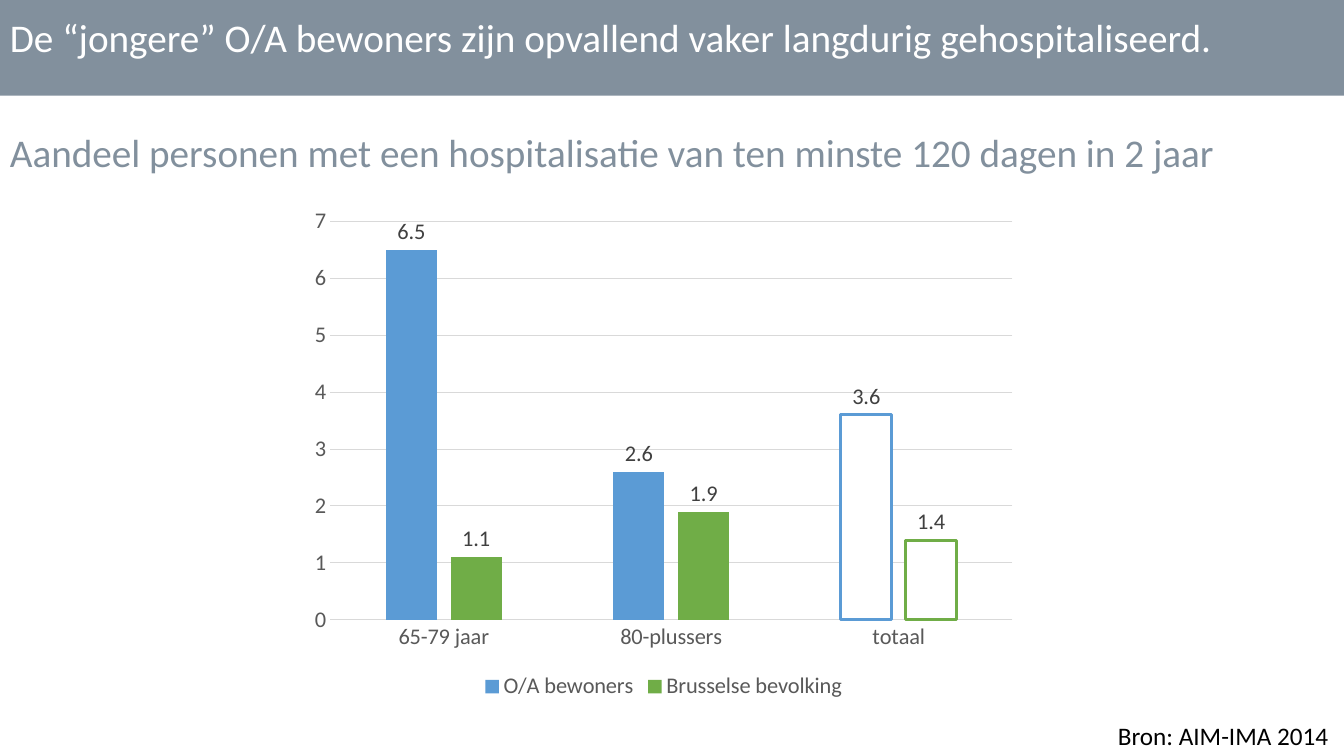
from dataclasses import dataclass

from pptx import Presentation
from pptx import util as u
from pptx.chart.data import CategoryChartData
from pptx.dml.color import RGBColor
from pptx.enum import chart as charts, shapes, text


@dataclass(frozen=True)
class Theme:
    font: str = "Calibri"
    slate: str = "82909D"
    white: str = "FFFFFF"
    black: str = "000000"
    blue: str = "5B9BD5"
    green: str = "70AD47"
    grid: str = "D9D9D9"
    axis_text: str = "595959"
    label_text: str = "404040"
    heading_size: int = 28
    source_size: int = 18
    chart_size: int = 16


THEME = Theme()
WIDTH, HEIGHT = u.Cm(33.87), u.Cm(19.05)


def rgb(colour):
    return RGBColor.from_string(colour)


def set_font(font, size, colour):
    font.name = THEME.font
    font.size = u.Pt(size)
    font.color.rgb = rgb(colour)


def set_line(line, colour, width):
    line.color.rgb = rgb(colour)
    line.width = u.Pt(width)


def add_text(slide, box, wording, size, colour, align=text.PP_ALIGN.LEFT):
    frame = slide.shapes.add_textbox(*box).text_frame
    frame.word_wrap = True
    frame.auto_size = text.MSO_AUTO_SIZE.SHAPE_TO_FIT_TEXT
    paragraph = frame.paragraphs[0]
    paragraph.alignment = align
    run = paragraph.add_run()
    run.text = wording
    set_font(run.font, size, colour)


def add_title_band(slide, left, top, width, height):
    band = slide.shapes.add_shape(shapes.MSO_SHAPE.RECTANGLE, left, top, width, height)
    band.shadow.inherit = False
    band.fill.solid()
    band.fill.fore_color.rgb = rgb(THEME.slate)
    band.line.fill.background()
    add_text(slide, (left, top + u.Cm(0.2), width, u.Cm(1.45)),
             "De “jongere” O/A bewoners zijn opvallend vaker langdurig gehospitaliseerd.",
             THEME.heading_size, THEME.white)


def style_axes(chart):
    for axis in (chart.category_axis, chart.value_axis):
        axis.major_tick_mark = axis.minor_tick_mark = charts.XL_TICK_MARK.NONE
        set_font(axis.tick_labels.font, THEME.chart_size, THEME.axis_text)
    set_line(chart.category_axis.format.line, THEME.grid, 0.75)
    values = chart.value_axis
    values.format.line.fill.background()
    values.minimum_scale, values.maximum_scale, values.major_unit = 0, 7, 1
    values.has_major_gridlines = True
    set_line(values.major_gridlines.format.line, THEME.grid, 0.75)


def style_series(series, colour, total_index):
    """Fill the columns and show the total as an outlined column."""
    series.invert_if_negative = False
    series.format.fill.solid()
    series.format.fill.fore_color.rgb = rgb(colour)
    total = series.points[total_index].format
    total.fill.solid()
    total.fill.fore_color.rgb = rgb(THEME.white)
    set_line(total.line, colour, 2.25)
    labels = series.data_labels
    labels.show_value = True
    labels.position = charts.XL_LABEL_POSITION.OUTSIDE_END
    set_font(labels.font, THEME.chart_size, THEME.label_text)


def add_hospitalisation_chart(slide, box):
    data = CategoryChartData()
    data.categories = ["65-79 jaar", "80-plussers", "totaal"]
    data.add_series("O/A bewoners", (6.5, 2.6, 3.6))
    data.add_series("Brusselse bevolking", (1.1, 1.9, 1.4))
    chart = slide.shapes.add_chart(charts.XL_CHART_TYPE.COLUMN_CLUSTERED, *box, data).chart
    set_font(chart.font, THEME.chart_size, THEME.axis_text)
    chart.has_title = False
    chart.has_legend = True
    chart.legend.position = charts.XL_LEGEND_POSITION.BOTTOM
    chart.legend.include_in_layout = False
    set_font(chart.legend.font, THEME.chart_size, THEME.axis_text)
    style_axes(chart)
    plot = chart.plots[0]
    plot.vary_by_categories = False
    plot.gap_width, plot.overlap = 219, -27
    for series, colour in zip(plot.series, (THEME.blue, THEME.green)):
        style_series(series, colour, total_index=2)


def main():
    presentation = Presentation()
    presentation.slide_width, presentation.slide_height = WIDTH, HEIGHT
    slide = presentation.slides.add_slide(presentation.slide_layouts[6])
    add_title_band(slide, 0, 0, WIDTH, u.Cm(2.41))
    chart_width = source_width = u.Cm(18.31)
    add_text(slide, (WIDTH - source_width, u.Cm(18.03), source_width, u.Cm(1.02)),
             "Bron: AIM-IMA 2014\u00a0".rstrip() + chr(160), THEME.source_size,
             THEME.black, text.PP_ALIGN.RIGHT)
    add_text(slide, (0, u.Cm(3.1), WIDTH, u.Cm(1.45)),
             "Aandeel personen met een hospitalisatie van ten minste 120 dagen in 2 jaar",
             THEME.heading_size, THEME.slate)
    add_hospitalisation_chart(slide, (u.Cm(7.57), u.Cm(4.98), chart_width, u.Cm(12.78)))
    presentation.save("out.pptx")


if __name__ == "__main__":
    main()
